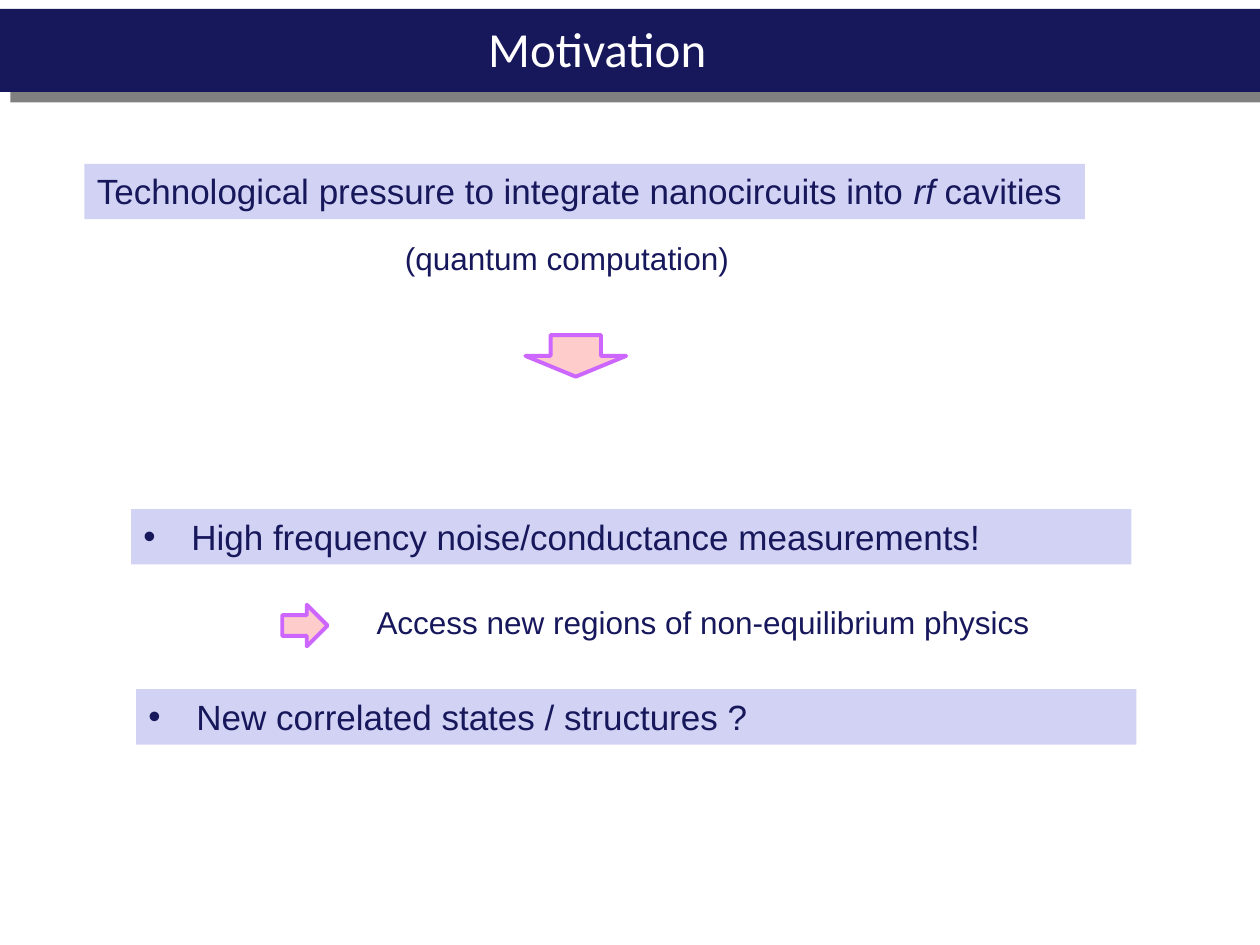
from lxml.etree import SubElement
from pptx import Presentation
from pptx.dml.color import RGBColor
from pptx.enum.shapes import MSO_SHAPE as Preset
from pptx.enum.text import MSO_ANCHOR as Anchor, PP_ALIGN as Align
from pptx.oxml.ns import qn
from pptx.util import Inches, Pt

NAVY = RGBColor(0x17, 0x17, 0x5C)
LAVENDER = RGBColor(0xD2, 0xD2, 0xF4)
PINK = RGBColor(0xFF, 0xCC, 0xCC)
VIOLET = RGBColor(0xCC, 0x66, 0xFF)
GREY = RGBColor(0x80, 0x80, 0x80)
WHITE = RGBColor(0xFF, 0xFF, 0xFF)

BAND_FONT = {"name": "Arial", "size": Pt(20)}
NOTE_FONT = {"name": "Arial", "size": Pt(18)}
TITLE_FONT = {"name": "Calibri", "size": Pt(28)}


def add_block(slide, preset, box, fill, outline=None):
    shape = slide.shapes.add_shape(preset, *map(Inches, box))
    shape.shadow.inherit = False
    shape.fill.solid()
    shape.fill.fore_color.rgb = fill
    if outline is None:
        shape.line.fill.background()
    else:
        shape.line.color.rgb = outline
        shape.line.width = Pt(2.25)
    return shape


def add_shadow(shape, color):
    effects = shape._element.spPr.find(qn("a:effectLst"))
    shadow = SubElement(effects, qn("a:outerShdw"), dist=str(Pt(8.5)),
                        dir=str(45 * 60000), algn="ctr", rotWithShape="0")
    SubElement(shadow, qn("a:srgbClr"), val=str(color))


def write_runs(paragraph, runs, color, font):
    for text, italic in runs:
        run = paragraph.add_run()
        run.text = text
        run.font.color.rgb = color
        for name, value in {**font, "italic": italic}.items():
            setattr(run.font, name, value)


def add_bullet(paragraph):
    properties = paragraph._p.get_or_add_pPr()
    properties.set("marL", str(Inches(0.38)))
    properties.set("indent", str(-Inches(0.38)))
    SubElement(properties, qn("a:buFont"), typeface="Arial")
    SubElement(properties, qn("a:buChar"), char="•")


def add_band(slide, left, top, runs, bullet=False):
    shape = add_block(slide, Preset.RECTANGLE, (left, top, 7.94, 0.44), LAVENDER)
    frame = shape.text_frame
    frame.word_wrap = True
    frame.vertical_anchor = Anchor.TOP
    paragraph = frame.paragraphs[0]
    paragraph.alignment = Align.LEFT
    if bullet:
        add_bullet(paragraph)
    write_runs(paragraph, runs, NAVY, BAND_FONT)


def add_label(slide, box, text, color, font, wrap=False):
    frame = slide.shapes.add_textbox(*map(Inches, box)).text_frame
    frame.word_wrap = wrap
    paragraph = frame.paragraphs[0]
    paragraph.alignment = Align.CENTER
    write_runs(paragraph, [(text, False)], color, font)


def add_title(slide, text):
    bar = add_block(slide, Preset.RECTANGLE, (0, 0.07, 10, 0.66), NAVY)
    add_shadow(bar, GREY)
    add_label(slide, (1.43, 0.1, 6.62, 0.57), text, WHITE, TITLE_FONT, wrap=True)


def main():
    presentation = Presentation()
    presentation.slide_width = Inches(10)
    presentation.slide_height = Inches(7.5)
    slide = presentation.slides.add_slide(presentation.slide_layouts[6])

    add_title(slide, "Motivation")
    add_band(slide, 0.67, 1.3, [
        ("Technological pressure to integrate nanocircuits into ", False),
        ("rf", True),
        (" cavities", False),
    ])
    add_label(slide, (3.1, 1.85, 2.8, 0.4), "(quantum computation)", NAVY, NOTE_FONT)
    add_block(slide, Preset.DOWN_ARROW, (4.17, 2.66, 0.8, 0.33), PINK, VIOLET)

    add_band(slide, 1.04, 4.04,
             [("High frequency noise/conductance measurements!", False)], bullet=True)
    add_block(slide, Preset.RIGHT_ARROW, (2.24, 4.8, 0.36, 0.33), PINK, VIOLET)
    add_label(slide, (2.86, 4.74, 5.44, 0.4),
              "Access new regions of non-equilibrium physics", NAVY, NOTE_FONT)
    add_band(slide, 1.08, 5.47,
             [("New correlated states / structures ?", False)], bullet=True)

    presentation.save("out.pptx")


if __name__ == "__main__":
    main()
